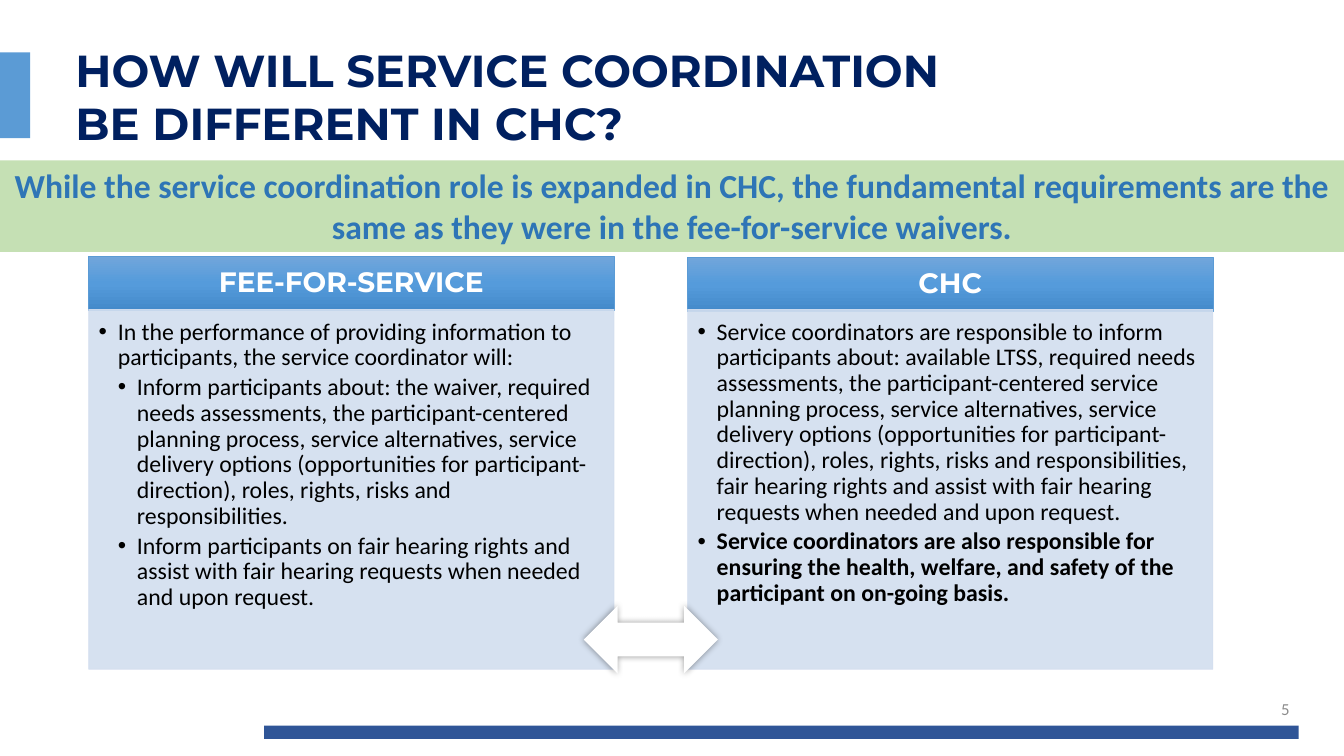
from dataclasses import dataclass

from lxml.etree import SubElement
from pptx import Presentation
from pptx.dml.color import RGBColor
from pptx.enum.shapes import MSO_SHAPE as Preset
from pptx.enum.text import MSO_ANCHOR as Anchor, PP_ALIGN as Align
from pptx.oxml.ns import qn
from pptx.shapes.autoshape import Shape
from pptx.slide import Slide
from pptx.util import Inches, Length, Pt


@dataclass(frozen=True)
class Theme:
    heading_font: str = "Montserrat"
    body_font: str = "Calibri"
    title_size: int = 32
    banner_size: int = 24
    header_size: int = 20
    body_size: int = 17
    number_size: int = 12
    navy: str = "002060"
    footer_blue: str = "2F5597"
    accent_blue: str = "5B9BD5"
    banner_blue: str = "2E75B6"
    banner_green: str = "C5E0B4"
    panel_blue: str = "D2DEEF"
    gray: str = "8C8C8C"
    white: str = "FFFFFF"
    black: str = "000000"
    header_gradient: tuple[tuple[int, str], ...] = (
        (0, "71A6DB"), (50, "559BDB"), (100, "448ACA"))


THEME = Theme()


@dataclass(frozen=True)
class Box:
    left: float
    top: float
    width: float
    height: float

    def lengths(self) -> tuple[Length, ...]:
        return tuple(Inches(v) for v in (self.left, self.top, self.width, self.height))


@dataclass(frozen=True)
class TextStyle:
    size: int
    color: str
    font: str = THEME.body_font
    bold: bool = False
    align: Align = Align.LEFT
    anchor: Anchor = Anchor.TOP
    insets: tuple[float, ...] = (0.1, 0.05, 0.1, 0.05)
    line_spacing: float | Length = 1.0
    space_before: float = 0
    space_after: float = 0


@dataclass(frozen=True)
class Line:
    text: str
    level: int = 0  # 0 has no bullet
    bold: bool = False


@dataclass(frozen=True)
class Panel:
    left: float
    header_top: float
    header: str
    lines: tuple[Line, ...]


TITLE = TextStyle(THEME.title_size, THEME.navy, THEME.heading_font, True,
                  line_spacing=Pt(28), space_before=10)
BANNER = TextStyle(THEME.banner_size, THEME.banner_blue, bold=True,
                   align=Align.CENTER, space_after=6)
HEADER = TextStyle(THEME.header_size, THEME.white, THEME.heading_font, True, Align.CENTER,
                   Anchor.MIDDLE, (0.16, 0.09, 0.16, 0.09), 0.9)
BODY = TextStyle(THEME.body_size, THEME.black, insets=(0.1, 0.1, 0.13, 0.15),
                 line_spacing=0.9, space_after=3)
NUMBER = TextStyle(THEME.number_size, THEME.gray, align=Align.RIGHT, anchor=Anchor.MIDDLE)

PANEL_WIDTH, HEADER_HEIGHT = 5.21, 0.54
BODY_TOP, BODY_HEIGHT = 3.07, 3.57
BULLET_INDENT = 0.19

PANELS = (
    Panel(0.88, 2.54, "FEE-FOR-SERVICE", (
        Line("In the performance of providing information to participants, "
             "the service coordinator will:", 1),
        Line("Inform participants about: the waiver, required needs assessments, the "
             "participant-centered planning process, service alternatives, service delivery "
             "options (opportunities for participant-direction), roles, rights, risks and "
             "responsibilities.", 2),
        Line("Inform participants on fair hearing rights and assist with fair hearing "
             "requests when needed and upon request.", 2),
    )),
    Panel(6.82, 2.55, "CHC", (
        Line("Service coordinators are responsible to inform participants about: available "
             "LTSS, required needs assessments, the participant-centered service planning "
             "process, service alternatives, service delivery options (opportunities for "
             "participant-direction), roles, rights, risks and responsibilities, fair hearing "
             "rights and assist with fair hearing requests when needed and upon request.", 1),
        Line("Service coordinators are also responsible for ensuring the health, welfare, "
             "and safety of the participant on on-going basis.", 1, True),
    )),
)


def add_filled_shape(slide: Slide, box: Box, color: str,
                     preset: Preset = Preset.RECTANGLE) -> Shape:
    shape = slide.shapes.add_shape(preset, *box.lengths())
    shape.shadow.inherit = False
    shape.fill.solid()
    shape.fill.fore_color.rgb = RGBColor.from_string(color)
    shape.line.fill.background()
    return shape


def outline(shape: Shape, color: str) -> None:
    shape.line.color.rgb = RGBColor.from_string(color)
    shape.line.width = Pt(0.5)


def write_text(shape: Shape, lines: tuple[Line, ...], style: TextStyle) -> None:
    frame = shape.text_frame
    frame.word_wrap = True
    frame.vertical_anchor = style.anchor
    (frame.margin_left, frame.margin_top,
     frame.margin_right, frame.margin_bottom) = (Inches(v) for v in style.insets)
    for index, line in enumerate(lines):
        paragraph = frame.add_paragraph() if index else frame.paragraphs[0]
        paragraph.alignment = style.align
        paragraph.line_spacing = style.line_spacing
        paragraph.space_before = Pt(style.space_before if index else 0)
        paragraph.space_after = Pt(style.space_after)
        if line.level:
            add_bullet(paragraph, line.level)
        run = paragraph.add_run()
        run.text = line.text
        run.font.name = style.font
        run.font.size = Pt(style.size)
        run.font.bold = style.bold or line.bold
        run.font.color.rgb = RGBColor.from_string(style.color)


def add_bullet(paragraph, level: int) -> None:
    properties = paragraph._p.get_or_add_pPr()
    properties.set("marL", str(Inches(BULLET_INDENT * level)))
    properties.set("indent", str(-Inches(BULLET_INDENT)))
    SubElement(properties, qn("a:buFont"), typeface="Arial")
    SubElement(properties, qn("a:buChar"), char="•")


def add_text_box(slide: Slide, box: Box, lines: tuple[Line, ...], style: TextStyle) -> None:
    write_text(slide.shapes.add_textbox(*box.lengths()), lines, style)


def apply_header_gradient(shape: Shape) -> None:
    shape.fill.gradient()
    shape.fill.gradient_angle = 270
    stops = shape._element.spPr.find(qn("a:gradFill")).find(qn("a:gsLst"))
    for stop in list(stops):
        stops.remove(stop)
    for percent, color in THEME.header_gradient:
        stop = SubElement(stops, qn("a:gs"), pos=str(percent * 1000))
        SubElement(stop, qn("a:srgbClr"), val=color)


def make_translucent(shape: Shape, percent: int) -> None:
    """Set the opacity of both fill and outline."""
    for color in shape._element.spPr.iter(qn("a:srgbClr")):
        SubElement(color, qn("a:alpha"), val=str(percent * 1000))


def add_glow_shadow(shape: Shape) -> None:
    """Add a soft shadow, evenly spread on all sides."""
    effects = shape._element.spPr.find(qn("a:effectLst"))
    shadow = SubElement(effects, qn("a:outerShdw"), blurRad=str(Pt(5)), dist="0", dir="0",
                        algn="ctr", rotWithShape="0")
    color = SubElement(shadow, qn("a:srgbClr"), val=THEME.black)
    SubElement(color, qn("a:alpha"), val="40000")


def add_panel(slide: Slide, panel: Panel) -> None:
    header = add_filled_shape(
        slide, Box(panel.left, panel.header_top, PANEL_WIDTH, HEADER_HEIGHT), THEME.accent_blue)
    apply_header_gradient(header)
    outline(header, THEME.accent_blue)
    write_text(header, (Line(panel.header),), HEADER)

    body = add_filled_shape(
        slide, Box(panel.left, BODY_TOP, PANEL_WIDTH, BODY_HEIGHT), THEME.panel_blue)
    outline(body, THEME.panel_blue)
    make_translucent(body, 90)
    write_text(body, panel.lines, BODY)


def main() -> None:
    presentation = Presentation()
    presentation.slide_width, presentation.slide_height = Inches(13.33), Inches(7.5)
    slide = presentation.slides.add_slide(presentation.slide_layouts[6])

    add_filled_shape(slide, Box(2.62, 7.2, 10.26, 0.13), THEME.footer_blue)
    add_text_box(slide, Box(0.65, 0.52, 11.05, 1.04),
                 (Line("HOW WILL SERVICE COORDINATION"), Line("BE DIFFERENT IN CHC?")), TITLE)
    add_filled_shape(slide, Box(0, 0.52, 0.3, 0.85), THEME.accent_blue)
    for panel in PANELS:
        add_panel(slide, panel)
    arrow = add_filled_shape(slide, Box(5.79, 6.01, 1.33, 0.67), THEME.white,
                             Preset.LEFT_RIGHT_ARROW)
    add_glow_shadow(arrow)
    add_text_box(slide, Box(9.89, 6.83, 3, 0.4), (Line("5"),), NUMBER)
    banner = add_filled_shape(slide, Box(0, 1.59, 13.33, 0.91), THEME.banner_green)
    write_text(banner, (Line("While the service coordination role is expanded in CHC, the "
                             "fundamental requirements are the same as they were in the "
                             "fee-for-service waivers."),), BANNER)
    presentation.save("out.pptx")


if __name__ == "__main__":
    main()
